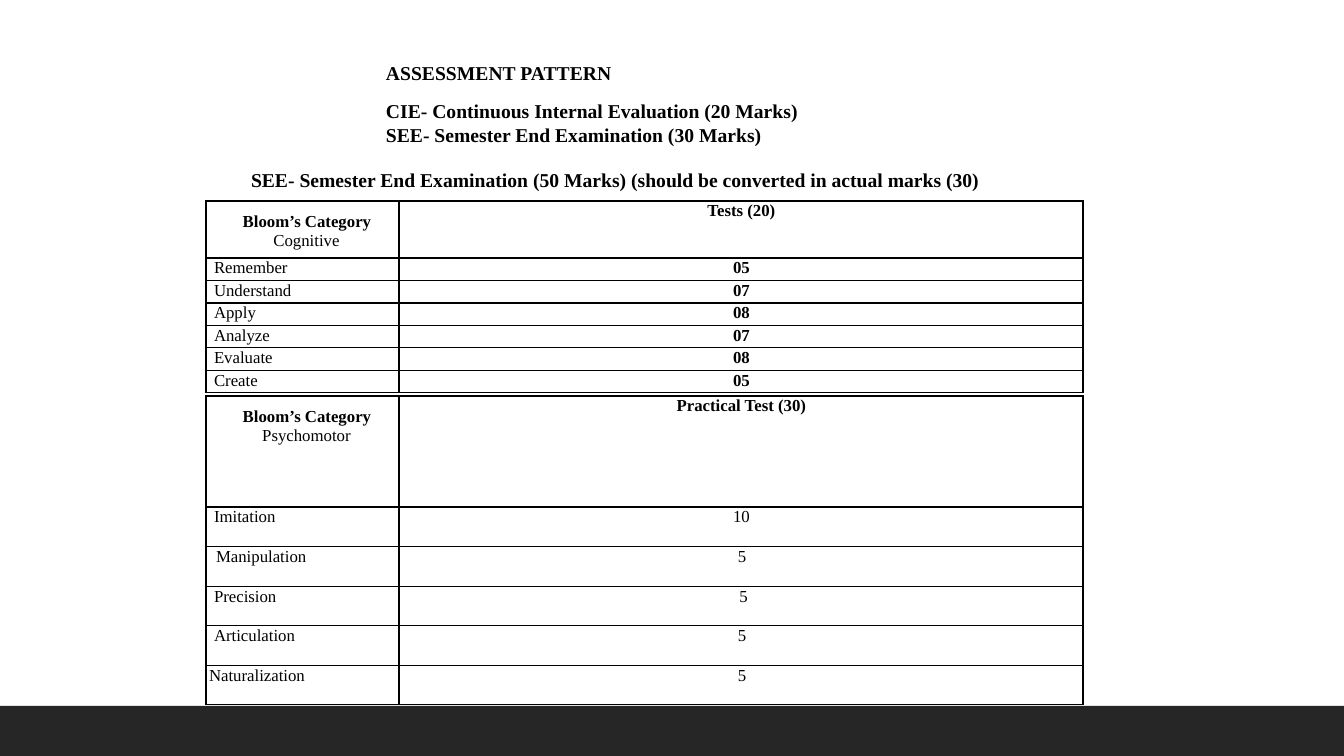
from dataclasses import dataclass
from typing import Any

from lxml import etree
from pptx import Presentation
from pptx.dml.color import RGBColor
from pptx.enum.shapes import MSO_SHAPE
from pptx.enum.text import PP_ALIGN
from pptx.oxml.ns import qn
from pptx.util import Emu, Pt

LEFT, CENTER = PP_ALIGN.LEFT, PP_ALIGN.CENTER
RECT = MSO_SHAPE.RECTANGLE
SCALE = 914400 / 100.8
FONT = "Times New Roman"
BLACK, DARK = "000000", "262626"


@dataclass
class Row:
    label: str
    mark: str
    indent: int = 8
    shift: int = 1


@dataclass
class Grid:
    top: int
    height: int
    head: int
    domain: str
    title: str
    bold: bool
    rows: list[Row]


GRIDS = [
    Grid(201, 192, 57, "Cognitive", "Tests (20)", True, [
        Row("Remember", "05"),
        Row("Understand", "07"),
        Row("Apply", "08"),
        Row("Analyze", "07"),
        Row("Evaluate", "08"),
        Row("Create", "05"),
    ]),
    Grid(396, 309, 111, "Psychomotor", "Practical Test (30)", False, [
        Row("Imitation", "10"),
        Row("Manipulation", "5", 10, 2),
        Row("Precision", "5", 8, 5),
        Row("Articulation", "5", 8, 2),
        Row("Naturalization", "5", 3, 2),
    ]),
]


def px(size: float) -> Emu:
    return Emu(round(size * SCALE))


def paint(code: str) -> RGBColor:
    return RGBColor.from_string(code)


def write(frame: Any, text: str, *, size: int = 12, bold: bool = False,
          align: Any = LEFT, indent: int = 0, line: float | None = None,
          before: float = 0) -> None:
    para = frame.paragraphs[0]
    if para.runs:
        para = frame.add_paragraph()
    props = para._p.get_or_add_pPr()
    props.set("marL", str(px(indent)))
    props.set("indent", "0")
    para.alignment = align
    if line:
        para.line_spacing = Pt(line)
    if before:
        para.space_before = Pt(before)
    run = para.add_run()
    run.text = text
    run.font.name = FONT
    run.font.size = Pt(size)
    run.font.bold = bold
    run.font.color.rgb = paint(BLACK)


def add_box(slide: Any, left: int, top: int, width: int, height: int) -> Any:
    frame = slide.shapes.add_textbox(px(left), px(top), px(width), px(height)).text_frame
    frame.word_wrap = True
    frame.margin_left = frame.margin_right = frame.margin_bottom = 0
    frame.margin_top = px(1)
    return frame


def style(cell: Any, inset: int = 0) -> None:
    cell.margin_left = cell.margin_right = cell.margin_bottom = 0
    cell.margin_top = px(inset)
    cell.fill.background()
    props = cell._tc.get_or_add_tcPr()
    for index, side in enumerate(("a:lnL", "a:lnR", "a:lnT", "a:lnB")):
        edge = etree.Element(qn(side), w=str(Pt(1)))
        fill = etree.SubElement(edge, qn("a:solidFill"))
        etree.SubElement(fill, qn("a:srgbClr"), val=BLACK)
        props.insert(index, edge)


def add_grid(slide: Any, grid: Grid) -> None:
    count = len(grid.rows)
    table = slide.shapes.add_table(count + 1, 2, px(206), px(grid.top),
                                   px(877), px(grid.height)).table
    table.first_row = table.horz_banding = False
    table.columns[0].width, table.columns[1].width = px(193), px(684)
    table.rows[0].height = px(grid.head)

    name, title = table.cell(0, 0), table.cell(0, 1)
    style(name, 11)
    style(title)
    write(name.text_frame, "Bloom’s Category", bold=True, align=CENTER, indent=9, line=13.7)
    write(name.text_frame, grid.domain, align=CENTER, indent=8, line=13.7)
    write(title.text_frame, grid.title, bold=True, align=CENTER, indent=1, line=14)

    for index, row in enumerate(grid.rows, 1):
        table.rows[index].height = px((grid.height - grid.head) / count)
        label, mark = table.cell(index, 0), table.cell(index, 1)
        style(label)
        style(mark)
        write(label.text_frame, row.label, indent=row.indent, line=14)
        write(mark.text_frame, row.mark, bold=grid.bold, align=CENTER,
              indent=row.shift, line=14)


def main() -> None:
    deck = Presentation()
    deck.slide_width, deck.slide_height = px(1344), px(756)
    slide = deck.slides.add_slide(deck.slide_layouts[6])

    bar = slide.shapes.add_shape(RECT, 0, px(706), px(1344), px(50))
    bar.shadow.inherit = False
    bar.fill.solid()
    bar.fill.fore_color.rgb = paint(DARK)
    bar.line.fill.background()

    intro = add_box(slide, 385, 72, 572, 74)
    for text, before in (
        ("ASSESSMENT PATTERN", 0),
        ("CIE- Continuous Internal Evaluation (20 Marks)", 18.4),
        ("SEE- Semester End Examination (30 Marks)", 9.1),
    ):
        write(intro, text, size=14, bold=True, indent=1, line=8.4, before=before)

    note = add_box(slide, 250, 167, 767, 24)
    write(note, "SEE- Semester End Examination (50 Marks) "
          "(should be converted in actual marks (30)", size=14, bold=True, indent=1)

    for grid in GRIDS:
        add_grid(slide, grid)
    deck.save("out.pptx")


if __name__ == "__main__":
    main()
